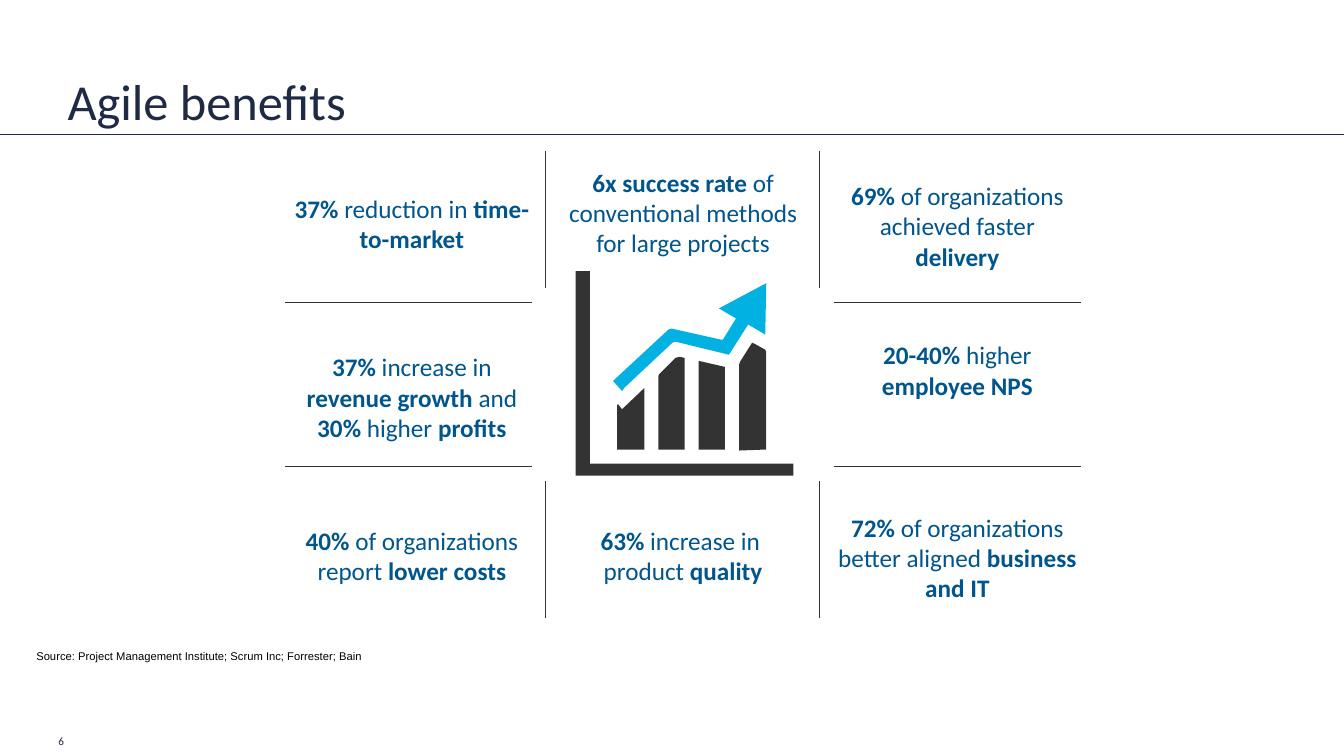
from pptx import Presentation
from pptx.dml.color import RGBColor
from pptx.enum.shapes import MSO_CONNECTOR
from pptx.enum.text import MSO_ANCHOR, PP_ALIGN
from pptx.oxml.ns import qn
from pptx.util import Inches, Pt
from lxml import etree

STRAIGHT = MSO_CONNECTOR.STRAIGHT
TOP, MID, LOW = MSO_ANCHOR.TOP, MSO_ANCHOR.MIDDLE, MSO_ANCHOR.BOTTOM
LEFT, CENTER = PP_ALIGN.LEFT, PP_ALIGN.CENTER
NAVY, BLUE, GRAY, CYAN, BLACK = "1F2A44", "00558C", "333333", "00B1E2", "000000"

TITLE = "Agile benefits"
SOURCE = "Source: Project Management Institute; Scrum Inc; Forrester; Bain"
PAGE = "6"

# Asterisks enclose bold text.
FACTS = [
    (0, 1.89, 0.67, "*37%* reduction in *time-to-market*"),
    (0, 3.46, 0.97, "*37%* increase in *revenue growth *and *30%* higher *profits*"),
    (0, 5.18, 0.67, "*40%* of organizations report *lower costs*"),
    (1, 1.63, 0.97, "*6x success rate *of conventional methods for large projects"),
    (1, 5.18, 0.67, "*63%* increase in \nproduct *quality*"),
    (2, 1.76, 0.97, "*69%* of organizations achieved faster *delivery*"),
    (2, 3.34, 0.67, "*20-40%* higher *employee NPS*"),
    (2, 5.05, 0.97, "*72%* of organizations better aligned *business and IT*"),
]
COLS = (2.86, 5.55, 8.27)
WIDE, TALL = 2.45, 1.36

UNIT = 0.01
ICON = [
    (GRAY, [(585, 269), (585, 460), (787, 460), (787, 472), (571, 472), (571, 269)]),
    (CYAN, [(617, 388), (608, 378), (663, 327), (666, 326), (715, 337), (717, 337),
            (730, 316), (713, 306), (760, 281), (759, 332), (742, 322), (723, 352),
            (670, 339), (667, 340), (619, 385)]),
    (GRAY, [(612, 402), (613, 401), (617, 406), (639, 385), (639, 446), (612, 446)]),
    (GRAY, [(653, 446), (653, 373), (654, 371), (670, 355), (674, 354), (679, 355),
            (679, 446)]),
    (GRAY, [(693, 358), (719, 364), (719, 446), (693, 446)]),
    (GRAY, [(733, 447), (733, 362), (734, 359), (746, 340), (750, 342), (759, 347),
            (760, 349), (760, 446)]),
]


def color(code):
    return RGBColor.from_string(code)


def write(box, text, face, size, tint, anchor, align=LEFT, pad=(0, 0, 0, 0)):
    frame = slide.shapes.add_textbox(*map(Inches, box)).text_frame
    frame.word_wrap = True
    frame.vertical_anchor = anchor
    (frame.margin_left, frame.margin_top,
     frame.margin_right, frame.margin_bottom) = map(Inches, pad)
    para = frame.paragraphs[0]
    para.alignment = align
    font = para.font
    font.name, font.size = face, Pt(size)
    font.color.rgb = color(tint)
    for pos, part in enumerate(text.split("*")):
        for row, words in enumerate(part.split("\n")):
            if row:
                para.add_line_break()
            if words:
                run = para.add_run()
                run.text = words
                if pos % 2:
                    run.font.bold = True


def rule(x, y, dx, dy, tint=GRAY, width=0.75):
    line = slide.shapes.add_connector(
        STRAIGHT, *map(Inches, (x, y, x + dx, y + dy)))
    line.line.color.rgb = color(tint)
    line.line.width = Pt(width)
    etree.SubElement(line._element.spPr, qn("a:effectLst"))


def draw(tint, points):
    path = slide.shapes.build_freeform(*points[0], scale=Inches(UNIT))
    path.add_line_segments(points[1:], close=True)
    shape = path.convert_to_shape()
    shape.shadow.inherit = False
    shape.fill.solid()
    shape.fill.fore_color.rgb = color(tint)
    shape.line.fill.background()


deck = Presentation()
deck.slide_width, deck.slide_height = Inches(13.33), Inches(7.5)
slide = deck.slides.add_slide(deck.slide_layouts[6])

edge = (0, 0.05, 0.1, 0.05)
write((0.58, 7.23, 0.92, 0.24), PAGE, "Calibri", 8, NAVY, MID, pad=edge)
rule(0, 1.33, 13.33, 0, NAVY, 0.5)
write((0.36, 6.45, 12.61, 0.13), SOURCE, "Arial", 8, BLACK, LOW)
write((0.67, 0.47, 12.17, 0.87), TITLE, "Calibri", 36, NAVY, LOW, pad=edge)

for col, top, high, text in FACTS:
    write((COLS[col], top, WIDE, high), text, "Calibri", 18, BLUE, TOP,
          CENTER, (0.03,) * 4)

for x in (2.83, 8.27):
    for y in (3, 4.63):
        rule(x, y, WIDE, 0)
for x in (5.41, 8.13):
    for y in (1.5, 4.77):
        rule(x, y, 0, TALL)

for tint, points in ICON:
    draw(tint, points)

deck.save("out.pptx")
